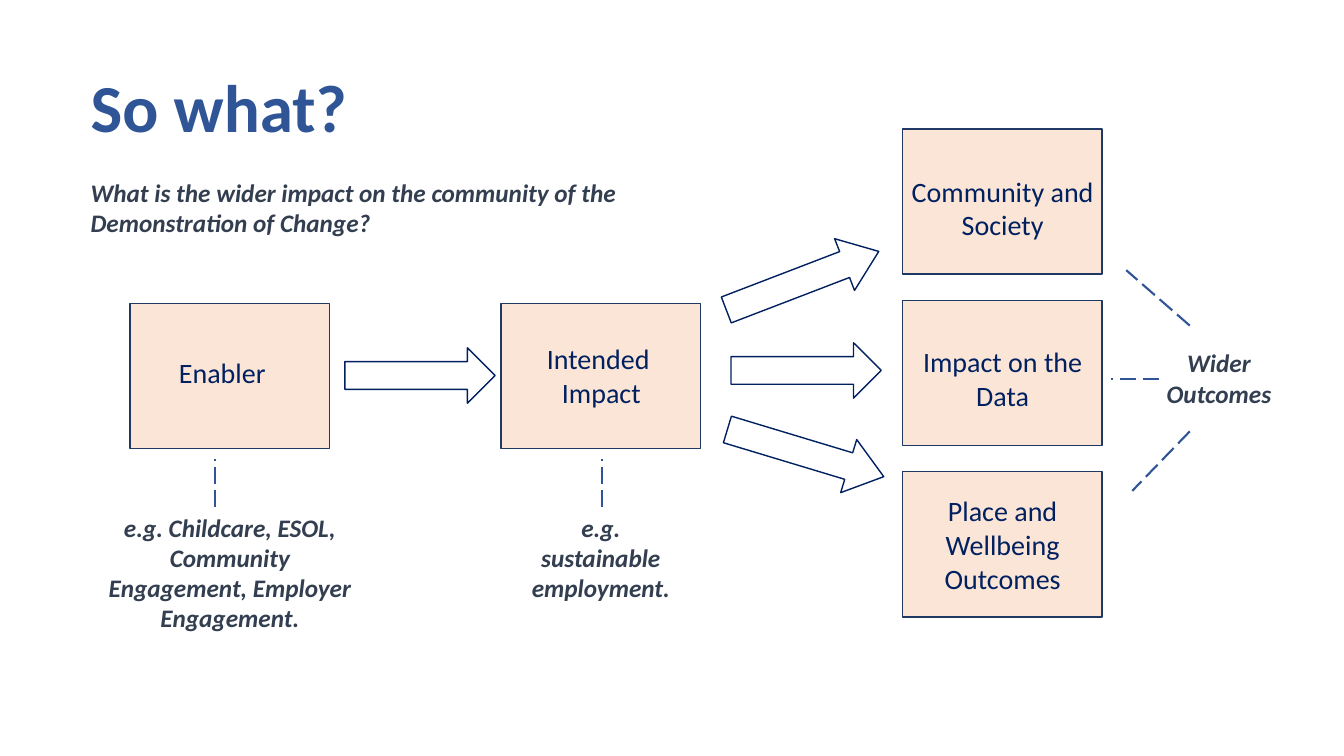
from dataclasses import dataclass

from lxml import etree
from pptx import Presentation
from pptx.dml.color import RGBColor
from pptx.enum.dml import MSO_LINE
from pptx.enum.shapes import MSO_CONNECTOR, MSO_SHAPE
from pptx.enum.text import MSO_ANCHOR, MSO_AUTO_SIZE, PP_ALIGN
from pptx.oxml.ns import qn
from pptx.util import Inches, Pt

RECTANGLE, RIGHT_ARROW = MSO_SHAPE.RECTANGLE, MSO_SHAPE.RIGHT_ARROW
STRAIGHT, LONG_DASH = MSO_CONNECTOR.STRAIGHT, MSO_LINE.LONG_DASH
TOP, MIDDLE = MSO_ANCHOR.TOP, MSO_ANCHOR.MIDDLE
LEFT, CENTER = PP_ALIGN.LEFT, PP_ALIGN.CENTER
NO_AUTO_SIZE = MSO_AUTO_SIZE.NONE
TITLE_ONLY_LAYOUT = 5

FONT = "Calibri"
COLORS = {
    "title": "2F5597",
    "note": "333F50",
    "label": "002060",
    "box_fill": "FBE5D6",
    "box_line": "203864",
    "arrow_line": "002060",
    "dash": "2F5597",
}
BOX_WIDTH, BOX_HEIGHT = 1.98, 1.44
LABEL_WIDTH = 2.13


@dataclass
class Stage:
    left: float
    top: float
    lines: list[str]
    label_left: float
    label_top: float
    label_height: float


@dataclass
class Note:
    left: float
    top: float
    width: float
    height: float
    text: str
    align: PP_ALIGN = CENTER


@dataclass
class Arrow:
    left: float
    top: float
    width: float = 1.49
    rotation: float = 0
    head: float = 0.5


@dataclass
class Dash:
    start: tuple[float, float]
    end: tuple[float, float]


OUTCOME_LEFT, OUTCOME_TOP, OUTCOME_STEP = 8.95, 1.28, 1.7
OUTCOMES = [
    ("Community and Society", 1.68, 0.77),
    ("Impact on the Data", 3.37, 0.77),
    ("Place and Wellbeing Outcomes", 4.85, 1.11),
]
STAGES = [
    Stage(1.29, 3.01, ["Enabler"], 1.14, 3.48, 0.44),
    Stage(4.97, 3.01, ["Intended ", "Impact"], 4.9, 3.34, 0.77),
] + [
    Stage(OUTCOME_LEFT, OUTCOME_TOP + index * OUTCOME_STEP, [text], 8.88, top, height)
    for index, (text, top, height) in enumerate(OUTCOMES)
]
NOTES = [
    Note(0.8, 1.71, 6.02, 0.91,
         "What is the wider impact on the community of the Demonstration of Change?", LEFT),
    Note(0.92, 5.03, 2.72, 1.51,
         "e.g. Childcare, ESOL, Community Engagement, Employer Engagement."),
    Note(5.13, 5.03, 1.66, 1.21, "e.g. sustainable employment."),
    Note(11.26, 3.4, 1.66, 0.71, "Wider Outcomes"),
]
ARROWS = [
    Arrow(3.42, 3.45),
    Arrow(7.15, 2.51, 1.62, 339, 0.66),
    Arrow(7.25, 3.4),
    Arrow(7.18, 4.22, 1.62, 16.8, 0.66),
]
DASHES = [
    Dash((2.13, 5.03), (2.13, 4.55)),
    Dash((5.97, 5.03), (5.97, 4.55)),
    Dash((11.8, 3.23), (11.17, 2.68)),
    Dash((11.5, 3.76), (11.02, 3.76)),
    Dash((11.8, 4.28), (11.23, 4.87)),
]


def color(name: str) -> RGBColor:
    return RGBColor.from_string(COLORS[name])


def write_text(shape, lines: list[str], size: int, color_name: str, align: PP_ALIGN,
               anchor: MSO_ANCHOR = TOP, bold: bool = False, italic: bool = False) -> None:
    frame = shape.text_frame
    frame.word_wrap = True
    frame.auto_size = NO_AUTO_SIZE
    frame.vertical_anchor = anchor
    frame.text = "\n".join(lines)
    for paragraph in frame.paragraphs:
        paragraph.alignment = align
        font = paragraph.font
        font.name, font.size = FONT, Pt(size)
        font.bold, font.italic = bold, italic
        font.color.rgb = color(color_name)


def add_outlined(slide, kind: MSO_SHAPE, left: float, top: float, width: float,
                 height: float, line_color: str):
    shape = slide.shapes.add_shape(kind, Inches(left), Inches(top),
                                   Inches(width), Inches(height))
    shape.shadow.inherit = False
    shape.line.color.rgb = color(line_color)
    shape.line.width = Pt(1)
    return shape


def draw_stage(slide, stage: Stage) -> None:
    box = add_outlined(slide, RECTANGLE, stage.left, stage.top, BOX_WIDTH, BOX_HEIGHT,
                       "box_line")
    box.fill.solid()
    box.fill.fore_color.rgb = color("box_fill")
    label = slide.shapes.add_textbox(Inches(stage.label_left), Inches(stage.label_top),
                                     Inches(LABEL_WIDTH), Inches(stage.label_height))
    write_text(label, stage.lines, 20, "label", CENTER)


def draw_note(slide, note: Note) -> None:
    box = slide.shapes.add_textbox(Inches(note.left), Inches(note.top),
                                   Inches(note.width), Inches(note.height))
    write_text(box, [note.text], 18, "note", note.align, bold=True, italic=True)


def draw_arrow(slide, arrow: Arrow) -> None:
    shape = add_outlined(slide, RIGHT_ARROW, arrow.left, arrow.top, arrow.width, 0.55,
                         "arrow_line")
    shape.fill.background()
    shape.adjustments[1] = arrow.head
    shape.rotation = arrow.rotation


def draw_dash(slide, dash: Dash) -> None:
    ends = [Inches(value) for value in dash.start + dash.end]
    connector = slide.shapes.add_connector(STRAIGHT, *ends)
    connector.line.color.rgb = color("dash")
    connector.line.width = Pt(1.5)
    connector.line.dash_style = LONG_DASH
    etree.SubElement(connector._element.spPr, qn("a:effectLst"))


def main() -> None:
    presentation = Presentation()
    presentation.slide_width, presentation.slide_height = Inches(13.33), Inches(7.5)
    slide = presentation.slides.add_slide(presentation.slide_layouts[TITLE_ONLY_LAYOUT])

    # Title
    title = slide.shapes.title
    title.left, title.top = Inches(0.8), Inches(0.59)
    title.width, title.height = Inches(11.12), Inches(0.91)
    write_text(title, ["So what?"], 48, "title", LEFT, MIDDLE, bold=True)

    # Stages from enabler to outcomes
    for stage in STAGES:
        draw_stage(slide, stage)

    # Arrows between the stages
    for arrow in ARROWS:
        draw_arrow(slide, arrow)

    # Notes and the dashed lines that tie them to the stages
    for note in NOTES:
        draw_note(slide, note)
    for dash in DASHES:
        draw_dash(slide, dash)

    presentation.save("out.pptx")


if __name__ == "__main__":
    main()
